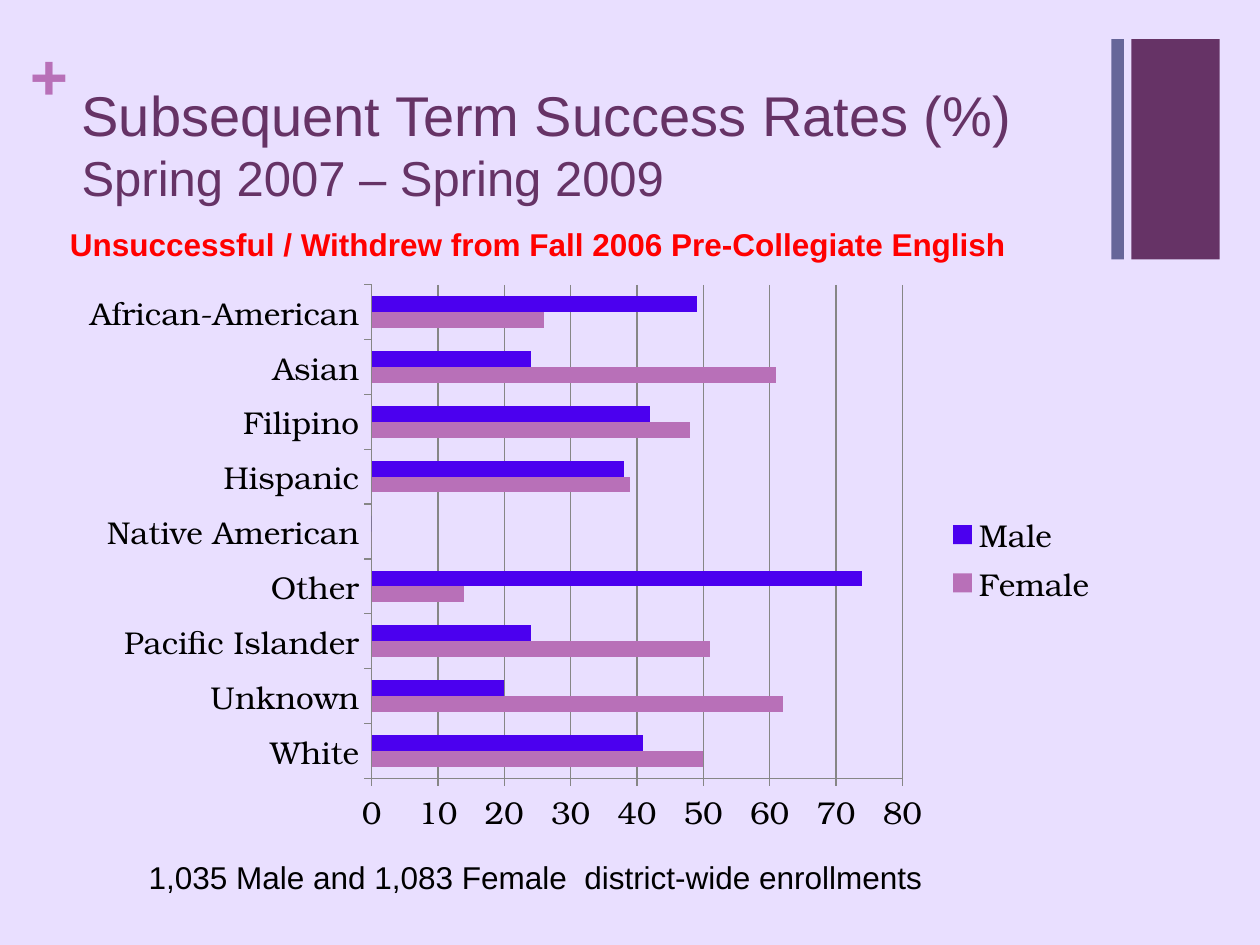
"""Build a slide of subsequent term success rates as a clustered bar chart."""
from lxml import etree
from pptx import Presentation, util as u
from pptx.chart import data as cd
from pptx.dml.color import RGBColor
from pptx.enum import chart as ch, shapes, text

HUES = {"back": "E9DFFF", "plum": "663366", "slate": "666699", "pink": "B870B8",
        "blue": "4B00EF", "red": "FF0000", "black": "000000", "gray": "868686"}
SANS, SERIF = "Arial", "TeX Gyre Bonum"
WIDE, HIGH = 10, 7.5
LEFT, SPAN = 0.055, 0.826
BAND = 0.854

TITLE = [("Subsequent Term Success Rates (%)", 32), ("Spring 2007 – Spring 2009", 28)]
NOTES = [
    ("Unsuccessful / Withdrew from Fall 2006 Pre-Collegiate English", 0, 0.232, "red", True),
    ("1,035 Male and 1,083 Female  district-wide enrollments", -0.002, 0.901, "black", False),
]
BARS = [("plum", 0.898, 0.07), ("slate", 0.882, 0.01)]
SERIES = [("Female", "pink"), ("Male", "blue")]
RATES = [
    ("White", 50, 41), ("Unknown", 62, 20), ("Pacific Islander", 51, 24),
    ("Other", 14, 74), ("Native American", 0, 0), ("Hispanic", 39, 38),
    ("Filipino", 48, 42), ("Asian", 61, 24), ("African-American", 26, 49),
]


def hue(name):
    return RGBColor.from_string(HUES[name])


def area(x, y, w, h):
    return [u.Inches(round(v, 2)) for v in (x * WIDE, y * HIGH, w * WIDE, h * HIGH)]


def style(font, size, color, face=SANS, bold=False):
    font.size, font.name, font.bold = u.Pt(size), face, bold
    font.color.rgb = hue(color)


def paint(fill, color):
    fill.solid()
    fill.fore_color.rgb = hue(color)


def label(slide, words, box, size, color, face=SANS, bold=False):
    frame = slide.shapes.add_textbox(*area(*box)).text_frame
    frame.word_wrap = True
    para = frame.paragraphs[0]
    para.text = words
    style(para.font, size, color, face, bold)
    return frame


def head(slide):
    frame = slide.shapes.add_textbox(*area(LEFT, 0.071, SPAN, 0.163)).text_frame
    frame.word_wrap = True
    frame.vertical_anchor = text.MSO_ANCHOR.MIDDLE
    para = frame.paragraphs[0]
    for i, (words, size) in enumerate(TITLE):
        if i:
            para.add_line_break()
        run = para.add_run()
        run.text = words
        style(run.font, size, "plum")


def graph(slide):
    data = cd.CategoryChartData()
    names, *cols = zip(*RATES)
    data.categories = names
    for (name, _), vals in zip(SERIES, cols):
        data.add_series(name, vals)
    chart = slide.shapes.add_chart(ch.XL_CHART_TYPE.BAR_CLUSTERED,
                                   *area(LEFT, 0.289, SPAN, 0.604), data).chart
    style(chart.font, 18, "black", SERIF)
    chart.has_title = False
    chart.has_legend = True
    chart.legend.position = ch.XL_LEGEND_POSITION.RIGHT
    chart.legend.include_in_layout = False
    plot = chart.plots[0]
    plot.gap_width, plot.overlap, plot.vary_by_categories = 150, 0, False
    for item, (_, color) in zip(plot.series, SERIES):
        paint(item.format.fill, color)
    cat, val = chart.category_axis, chart.value_axis
    val.minimum_scale, val.maximum_scale, val.major_unit = 0, 80, 10
    val.has_major_gridlines, cat.has_major_gridlines = True, False
    for axis in (cat, val):
        axis.major_tick_mark = ch.XL_TICK_MARK.OUTSIDE
    for part in (cat, val, val.major_gridlines):
        part.format.line.color.rgb = hue("gray")
        part.format.line.width = u.Pt(0.75)


def main():
    deck = Presentation()
    deck.slide_width, deck.slide_height = u.Inches(WIDE), u.Inches(HIGH)
    slide = deck.slides.add_slide(deck.slide_layouts[6])
    paint(slide.background.fill, "back")
    for color, x, w in BARS:
        bar = slide.shapes.add_shape(shapes.MSO_SHAPE.RECTANGLE, *area(x, 0.041, w, 0.233))
        bar.shadow.inherit = False
        paint(bar.fill, color)
        bar.line.fill.background()
    plus = label(slide, "+", (0.024, 0.033, 0.029, 0.081), 36, "pink", SERIF, True)
    plus.margin_left = plus.margin_right = plus.margin_top = plus.margin_bottom = 0
    head(slide)
    graph(slide)
    for words, x, y, color, bold in NOTES:
        note = label(slide, words, (x, y, BAND, 0.053), 18, color, bold=bold)
        note.paragraphs[0].alignment = text.PP_ALIGN.CENTER
    deck.save("out.pptx")


if __name__ == "__main__":
    main()
